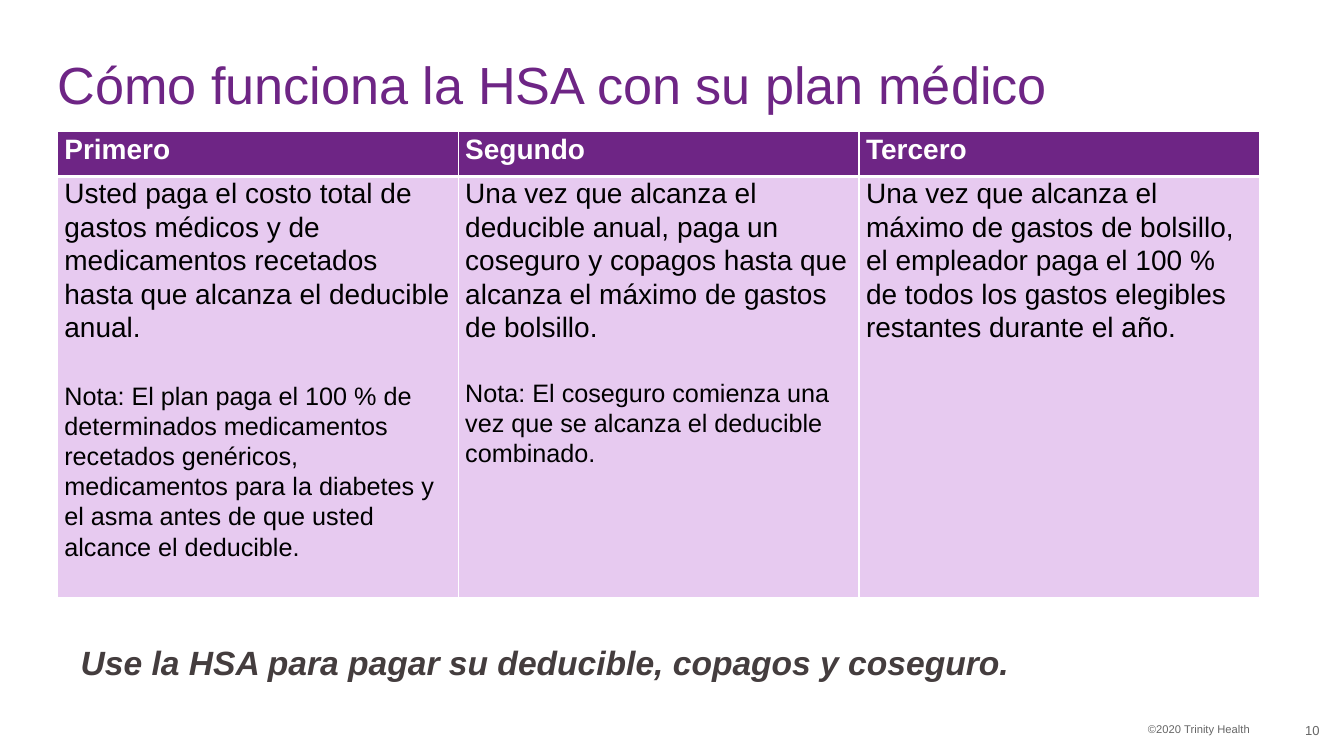
import pptx
import pptx.dml.color
import pptx.enum.text
import pptx.oxml.ns
import pptx.util
from lxml import etree

Pt = pptx.util.Pt
RGBColor = pptx.dml.color.RGBColor
Anchor = pptx.enum.text.MSO_ANCHOR
Align = pptx.enum.text.PP_ALIGN

PURPLE = RGBColor(0x6E, 0x25, 0x85)
LILAC = RGBColor(0xE7, 0xCA, 0xF0)
WHITE = RGBColor(0xFF, 0xFF, 0xFF)
BLACK = RGBColor(0x00, 0x00, 0x00)
CHARCOAL = RGBColor(0x44, 0x3D, 0x3E)
GRAY = RGBColor(0x66, 0x66, 0x66)

FONT = "Arial"
STAGES = [
    ("Primero", [
        "Usted paga el costo total de gastos médicos y de medicamentos recetados hasta que alcanza el deducible anual.",
        "Nota: El plan paga el 100 % de determinados medicamentos recetados genéricos, medicamentos para la diabetes y el asma antes de que usted alcance el deducible.",
    ], 26.5),
    ("Segundo", [
        "Una vez que alcanza el deducible anual, paga un coseguro y copagos hasta que alcanza el máximo de gastos de bolsillo.",
        "Nota: El coseguro comienza una vez que se alcanza el deducible combinado.",
    ], 24.5),
    ("Tercero", [
        "Una vez que alcanza el máximo de gastos de bolsillo, el empleador paga el 100 % de todos los gastos elegibles restantes durante el año.",
    ], 0),
]


def format_paragraph(paragraph, size, color, bold=False, italic=False):
    for run in paragraph.runs:
        run.font.name = FONT
        run.font.size = Pt(size)
        run.font.color.rgb = color
        run.font.bold = bold
        run.font.italic = italic


def set_margins(frame, left, top, right, bottom):
    frame.margin_left, frame.margin_top = Pt(left), Pt(top)
    frame.margin_right, frame.margin_bottom = Pt(right), Pt(bottom)


def add_title(slide, left, top, width, height, text):
    title = slide.shapes.title
    title.left, title.top, title.width, title.height = Pt(left), Pt(top), Pt(width), Pt(height)
    frame = title.text_frame
    frame.text = text
    frame.word_wrap = True
    frame.auto_size = pptx.enum.text.MSO_AUTO_SIZE.NONE
    frame.vertical_anchor = Anchor.MIDDLE
    set_margins(frame, 0, 0, 0, 0)
    paragraph = frame.paragraphs[0]
    paragraph.alignment = Align.LEFT
    paragraph.line_spacing = 0.9
    format_paragraph(paragraph, 37.3, PURPLE)


def add_text(slide, left, top, width, height, text, size, color,
             alignment=Align.LEFT, bold=False, italic=False):
    box = slide.shapes.add_textbox(Pt(left), Pt(top), Pt(width), Pt(height))
    frame = box.text_frame
    frame.word_wrap = True
    frame.text = text
    frame.paragraphs[0].alignment = alignment
    format_paragraph(frame.paragraphs[0], size, color, bold, italic)
    return frame


def set_borders(cell, widths):
    properties = cell._tc.get_or_add_tcPr()
    for side, width in widths.items():
        line = etree.SubElement(properties, pptx.oxml.ns.qn(f"a:ln{side}"), w=str(Pt(width)))
        fill = etree.SubElement(line, pptx.oxml.ns.qn("a:solidFill"))
        etree.SubElement(fill, pptx.oxml.ns.qn("a:srgbClr"), val=str(WHITE))


def fill_cell(cell, texts, sizes, color, background, bold, note_gap, borders):
    set_borders(cell, borders)
    cell.fill.solid()
    cell.fill.fore_color.rgb = background
    set_margins(cell, 5, 0, 5, 0)
    cell.vertical_anchor = Anchor.TOP
    cell.text_frame.text = "\n".join(texts)
    for index, (paragraph, size) in enumerate(zip(cell.text_frame.paragraphs, sizes)):
        paragraph.line_spacing = 1.07
        if index:
            paragraph.space_before = Pt(note_gap)
        format_paragraph(paragraph, size, color, bold)


def add_stages(slide, left, top, width, height, stages):
    header_height = 32
    frame = slide.shapes.add_table(2, len(stages), Pt(left), Pt(top), Pt(width), Pt(height))
    table = frame.table
    table.horz_banding = False
    table.rows[0].height = Pt(header_height)
    table.rows[1].height = Pt(height - header_height)
    for index, (heading, texts, note_gap) in enumerate(stages):
        table.columns[index].width = Pt(width / len(stages))
        fill_cell(table.cell(0, index), [heading], [20], WHITE, PURPLE, True, 0,
                  {"L": 1, "R": 1, "T": 1, "B": 3})
        fill_cell(table.cell(1, index), texts, [20, 18], BLACK, LILAC, False, note_gap,
                  {"L": 1, "R": 1, "T": 3, "B": 1})


def add_advice(slide, left, top, width, height):
    frame = add_text(slide, left, top, width, height,
                     "Use la HSA para pagar su deducible, copagos y coseguro.",
                     24, CHARCOAL, bold=True, italic=True)
    frame.paragraphs[0].line_spacing = Pt(21)
    frame.paragraphs[0].space_after = Pt(6)


def add_footer(slide, left, top, width, height):
    number_width = 42.5
    add_text(slide, left, top + 5, width - number_width - 28 + 28, 19,
             "©2020 Trinity Health", 8, GRAY, Align.RIGHT)
    frame = add_text(slide, left + width - number_width, top, number_width, height,
                     "10", 9.3, GRAY, Align.RIGHT)
    frame.vertical_anchor = Anchor.MIDDLE
    frame.margin_right = 0


def build_slide(presentation):
    slide = presentation.slides.add_slide(presentation.slide_layouts[5])
    add_title(slide, 41, 36, 864, 52.5, "Cómo funciona la HSA con su plan médico")
    add_stages(slide, 41, 94, 859, 333, STAGES)
    add_advice(slide, 50.5, 463, 840, 29)
    add_footer(slide, 512, 507.5, 430.5, 29)


def main():
    presentation = pptx.Presentation()
    presentation.slide_width = Pt(960)
    presentation.slide_height = Pt(540)
    build_slide(presentation)
    presentation.save("out.pptx")


if __name__ == "__main__":
    main()
